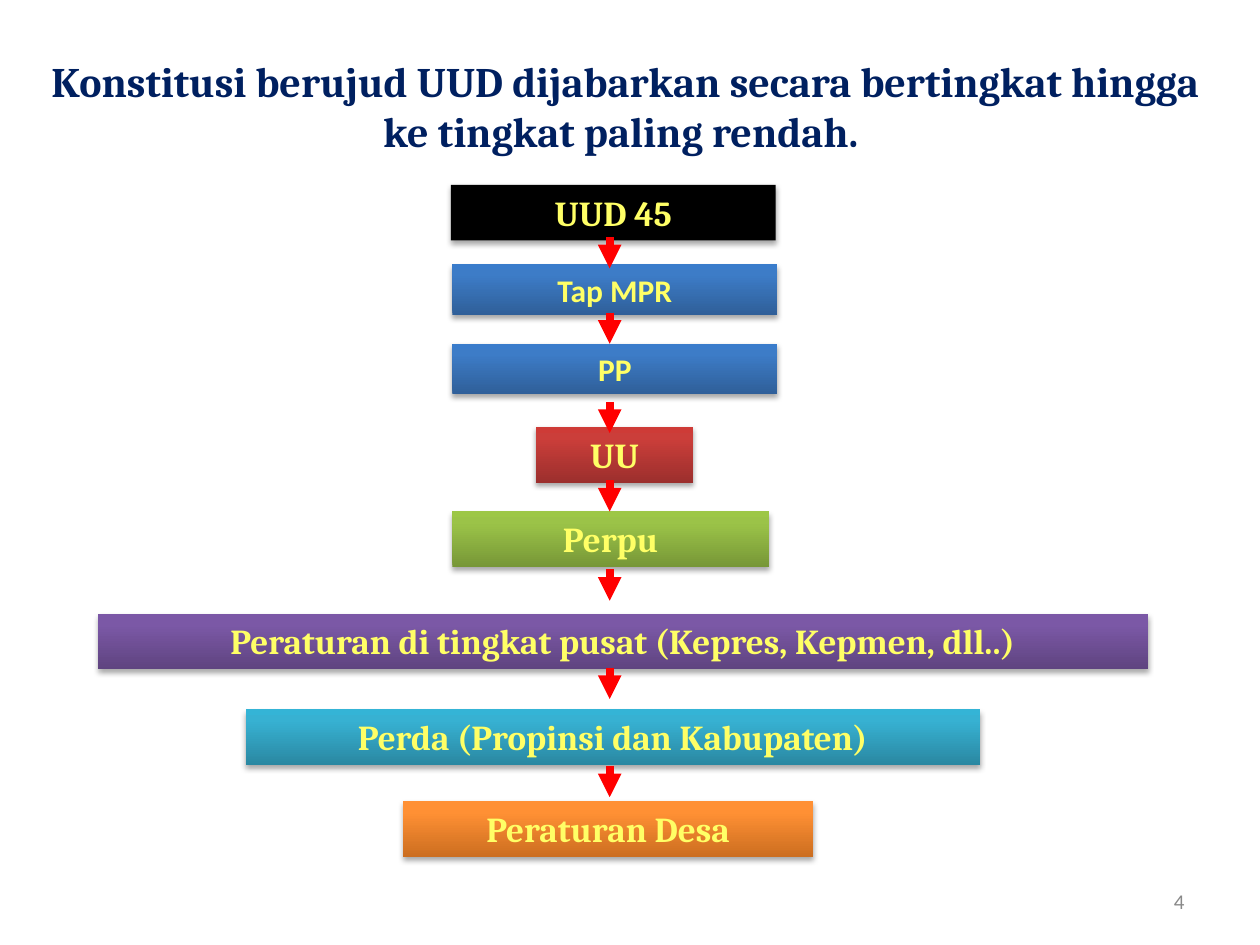
from copy import deepcopy

from lxml import etree
from pptx import Presentation
from pptx.dml.color import RGBColor
from pptx.enum.shapes import MSO_CONNECTOR, MSO_SHAPE
from pptx.enum.text import MSO_ANCHOR, MSO_AUTO_SIZE, PP_ALIGN
from pptx.oxml.ns import qn
from pptx.util import Cm, Pt

RECTANGLE = MSO_SHAPE.RECTANGLE
STRAIGHT = MSO_CONNECTOR.STRAIGHT
TOP, MIDDLE = MSO_ANCHOR.TOP, MSO_ANCHOR.MIDDLE
CENTER, RIGHT = PP_ALIGN.CENTER, PP_ALIGN.RIGHT
NO_AUTOFIT = MSO_AUTO_SIZE.NONE
TITLE_ONLY = 5

COLOURS = {
    "title": "002060",
    "label": "FFFF66",
    "arrow": "FF0000",
    "number": "898989",
    "shadow": "000000",
    "black": "000000",
}
GRADIENTS = {
    "blue": ("2F5F99", "3D7CC7", "3A7CCB"),
    "red": ("9C2F2D", "CB3E3A", "CE3B37"),
    "green": ("779737", "9BC348", "9DC746"),
    "purple": ("5F4480", "7B58A6", "7C57A8"),
    "aqua": ("2A88A2", "37B1D2", "34B4D6"),
    "orange": ("CC6E20", "FF9034", "FF9136"),
}
STOP_POSITIONS = (0, 0.8, 1)

TITLE_FONT = {"name": "Cambria", "size": Pt(24), "bold": True}
LAW_FONT = {"name": "Cambria", "size": Pt(20), "bold": True}
DECREE_FONT = {"name": "Calibri", "size": Pt(18), "bold": True}
NUMBER_FONT = {"name": "Calibri", "size": Pt(12), "bold": False}

LAW_HEIGHT, DECREE_HEIGHT = 1.12, 1.02
LEVELS = [
    ("UUD 45", "black", 7.11, 0, 6.55, LAW_HEIGHT, LAW_FONT),
    ("Tap MPR", "blue", 7.14, 1.6, 6.55, DECREE_HEIGHT, DECREE_FONT),
    ("PP", "blue", 7.14, 3.2, 6.55, DECREE_HEIGHT, DECREE_FONT),
    ("UU", "red", 8.82, 4.88, 3.18, LAW_HEIGHT, LAW_FONT),
    ("Perpu", "green", 7.14, 6.58, 6.38, LAW_HEIGHT, LAW_FONT),
    ("Peraturan di tingkat pusat (Kepres, Kepmen, dll..)", "purple",
     0, 8.64, 21.16, LAW_HEIGHT, LAW_FONT),
    ("Perda (Propinsi dan Kabupaten)", "aqua", 2.97, 10.57, 14.81, LAW_HEIGHT, LAW_FONT),
    ("Peraturan Desa", "orange", 6.15, 12.42, 8.26, LAW_HEIGHT, LAW_FONT),
]
ARROW_LEFT, ARROW_LENGTH = 10.31, 0.63
ARROW_TOPS = (1.05, 2.57, 4.37, 5.95, 7.75, 9.73, 11.71)


def write_text(shape, text, colour, font_format, alignment, anchor):
    """Put one formatted paragraph into a shape."""
    frame = shape.text_frame
    frame.word_wrap = True
    frame.auto_size = NO_AUTOFIT
    frame.vertical_anchor = anchor
    paragraph = frame.paragraphs[0]
    paragraph.alignment = alignment
    run = paragraph.add_run()
    run.text = text
    for name, value in font_format.items():
        setattr(run.font, name, value)
    run.font.color.rgb = RGBColor.from_string(COLOURS[colour])


def fill_level(shape, colour):
    """Fill a level with a plain colour or a three-stop upward gradient."""
    fill = shape.fill
    if colour not in GRADIENTS:
        fill.solid()
        fill.fore_color.rgb = RGBColor.from_string(COLOURS[colour])
        return
    fill.gradient()
    fill.gradient_angle = 90
    stop_list = shape._element.spPr.find(".//" + qn("a:gsLst"))
    stop_list.append(deepcopy(stop_list[-1]))
    for stop, position, value in zip(fill.gradient_stops, STOP_POSITIONS, GRADIENTS[colour]):
        stop.position = position
        stop.color.rgb = RGBColor.from_string(value)


def cast_shadow(shape):
    """Give a shape a soft shadow straight below it."""
    shape.shadow.inherit = False
    effects = shape._element.spPr.find(qn("a:effectLst"))
    shadow = etree.SubElement(
        effects, qn("a:outerShdw"), blurRad=str(Pt(3.1)), dist=str(Pt(1.8)),
        dir="5400000", rotWithShape="0")
    colour = etree.SubElement(shadow, qn("a:srgbClr"), val=COLOURS["shadow"])
    etree.SubElement(colour, qn("a:alpha"), val="35000")


def add_level(slide, left, top, width, height, text, colour, font_format):
    """Add one box of the hierarchy."""
    shape = slide.shapes.add_shape(RECTANGLE, Cm(left), Cm(top), Cm(width), Cm(height))
    fill_level(shape, colour)
    shape.line.fill.background()
    cast_shadow(shape)
    write_text(shape, text, "label", font_format, CENTER, TOP)


def add_arrow(slide, left, top, length):
    """Add a thick arrow that points down."""
    arrow = slide.shapes.add_connector(STRAIGHT, Cm(left), Cm(top), Cm(left), Cm(top + length))
    arrow.line.color.rgb = RGBColor.from_string(COLOURS["arrow"])
    arrow.line.width = Pt(4.5)
    etree.SubElement(arrow.line._get_or_add_ln(), qn("a:tailEnd"), type="triangle")
    etree.SubElement(arrow._element.spPr, qn("a:effectLst"))


def add_hierarchy(slide, left, top):
    """Stack the levels of law and the arrows between them."""
    for text, colour, x, y, width, height, font_format in LEVELS:
        add_level(slide, left + x, top + y, width, height, text, colour, font_format)
    for y in ARROW_TOPS:
        add_arrow(slide, left + ARROW_LEFT, top + y, ARROW_LENGTH)


def add_title(slide, left, top, width, height):
    """Move and fill the title placeholder."""
    title = slide.shapes.title
    title.left, title.top, title.width, title.height = map(Cm, (left, top, width, height))
    write_text(title, "Konstitusi berujud UUD dijabarkan secara bertingkat hingga "
               "ke tingkat paling rendah. ", "title", TITLE_FONT, CENTER, TOP)


def add_slide_number(slide, left, top, width, height):
    """Add the number in the lower right corner."""
    number = slide.shapes.add_textbox(Cm(left), Cm(top), Cm(width), Cm(height))
    write_text(number, "4", "number", NUMBER_FONT, RIGHT, MIDDLE)


def main():
    """Build and save the slide."""
    presentation = Presentation()
    presentation.slide_width, presentation.slide_height = Cm(25.4), Cm(19.05)
    slide = presentation.slides.add_slide(presentation.slide_layouts[TITLE_ONLY])
    add_title(slide, 0.64, 0.99, 23.93, 2.31)
    add_hierarchy(slide, 1.98, 3.73)
    add_slide_number(slide, 18.21, 17.65, 5.92, 1.02)
    presentation.save("out.pptx")


if __name__ == "__main__":
    main()
